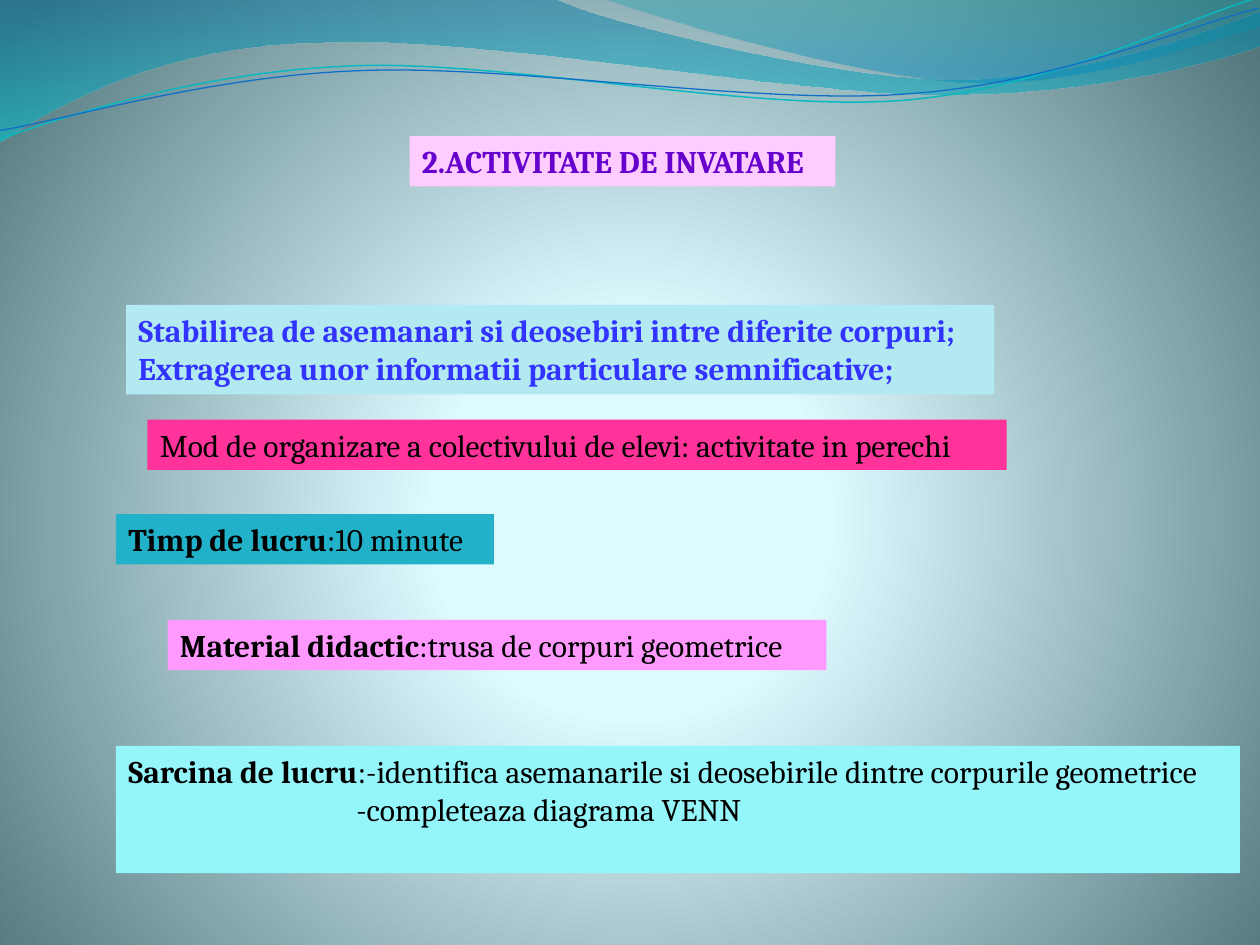
"""Build the lesson activity slide with its wave header and coloured text boxes."""
from dataclasses import dataclass
from typing import NamedTuple

from lxml.etree import Element, SubElement
from pptx import Presentation
from pptx.dml.color import RGBColor
from pptx.enum.text import MSO_ANCHOR, MSO_AUTO_SIZE
from pptx.oxml.ns import qn
from pptx.util import Emu, Pt

EMU_PER_PX = 9144
LINE_TILT = 357.3


class Stop(NamedTuple):
    pos: int
    color: str
    alpha: int = 100


@dataclass(frozen=True)
class Theme:
    font: str = "Cambria"
    size: int = 18
    black: str = "000000"
    violet: str = "6600CC"
    blue: str = "3333FF"
    lilac: str = "FFCCFF"
    pale_blue: str = "B3EAF2"
    rose: str = "FF3399"
    teal: str = "21B2C9"
    pink: str = "FF99FF"
    aqua: str = "94F5FA"
    turquoise_line: str = "0AB8BF"
    blue_line: str = "0F6FC6"
    backdrop: tuple = (Stop(0, "DEFBFF"), Stop(25, "DDFAFF"), Stop(100, "52767C"))
    left_wave: tuple = (Stop(0, "0074A1", 45), Stop(100, "00C6CF", 55))
    right_wave: tuple = (Stop(0, "00A1A9", 30), Stop(80, "008BBF", 45))


THEME = Theme()


class Line(NamedTuple):
    text: str
    lead: str = ""
    bold: bool = False
    indent: int = 0


class Box(NamedTuple):
    x: int
    y: int
    w: int
    h: int
    fill: str
    color: str
    lines: tuple


class Wave(NamedTuple):
    start: tuple
    segments: tuple
    stops: tuple = ()
    line: str = ""
    width: float = 0


WAVES = (
    Wave((0, -1), ((440, -1), (476, 17, 664, 63, 758, 63), (853, 63, 958, 26, 1000, 9),
                   (1001, 36), (983, 44, 870, 76, 746, 75), (622, 75, 382, 28, 257, 34),
                   (129, 35, 46, 83, -1, 113), (0, -1)), stops=THEME.left_wave),
    Wave((479, -1), ((509, 11, 682, 62, 769, 65), (856, 69, 961, 32, 1000, 21),
                     (1000, 0), (479, -1)), stops=THEME.right_wave),
    Wave((-2, 87), ((47, 72, 158, 41, 278, 42), (396, 42, 591, 93, 712, 90),
                    (832, 87, 940, 36, 1000, 22)), line=THEME.turquoise_line, width=0.85),
    Wave((-2, 80), ((46, 75, 164, 45, 283, 46), (404, 46, 596, 88, 716, 85),
                    (835, 83, 942, 42, 1001, 30)), line=THEME.blue_line, width=0.75),
)

BOXES = (
    Box(325, 108, 338, 40, THEME.lilac, THEME.violet,
        (Line("2.ACTIVITATE DE INVATARE", bold=True),)),
    Box(100, 242, 689, 71, THEME.pale_blue, THEME.blue,
        (Line("Stabilirea de asemanari si deosebiri intre diferite corpuri;", bold=True),
         Line("Extragerea unor informatii particulare semnificative;", bold=True))),
    Box(117, 333, 682, 40, THEME.rose, THEME.black,
        (Line("Mod de organizare a colectivului de elevi: activitate in perechi"),)),
    Box(92, 408, 300, 40, THEME.teal, THEME.black,
        (Line(":10 minute", lead="Timp de lucru"),)),
    Box(133, 492, 523, 40, THEME.pink, THEME.black,
        (Line(":trusa de corpuri geometrice", lead="Material didactic"),)),
    Box(92, 592, 892, 101, THEME.aqua, THEME.black,
        (Line(":-identifica asemanarile si deosebirile dintre corpurile geometrice",
              lead="Sarcina de lucru"),
         Line("-completeaza diagrama VENN", indent=181))),
)


def px(value: float) -> Emu:
    """Turn px into EMU."""
    return Emu(round(value * EMU_PER_PX))


def set_gradient(element, stops: tuple, radial: bool = False) -> None:
    """Write the stops and direction of the gradient fill inside an element."""
    grad = element.find(".//" + qn("a:gradFill"))
    for child in list(grad):
        grad.remove(child)
    gs_list = SubElement(grad, qn("a:gsLst"))
    for stop in stops:
        gs = SubElement(gs_list, qn("a:gs"), pos=str(stop.pos * 1000))
        clr = SubElement(gs, qn("a:srgbClr"), val=stop.color)
        if stop.alpha < 100:
            SubElement(clr, qn("a:alpha"), val=str(stop.alpha * 1000))
    if radial:
        direction = SubElement(grad, qn("a:path"), {"path": "circle"})
        SubElement(direction, qn("a:fillToRect"),
                   l="10000", t="110000", r="10000", b="100000")
    else:
        SubElement(grad, qn("a:lin"), ang="5400000", scaled="0")


def bend(element, segments: tuple) -> None:
    """Join the three line steps of each curved segment into one cubic curve."""
    steps = iter(element.findall(".//" + qn("a:lnTo")))
    for segment in segments:
        group = [next(steps) for _ in range(len(segment) // 2)]
        if len(group) == 3:
            curve = Element(qn("a:cubicBezTo"))
            group[0].addprevious(curve)
            for step in group:
                curve.append(step[0])
                step.getparent().remove(step)


def draw_wave(s, wave: Wave) -> None:
    """Draw a filled wave or a tilted wave line."""
    builder = s.shapes.build_freeform(*map(px, wave.start))
    points = [(px(x), px(y)) for seg in wave.segments for x, y in zip(seg[::2], seg[1::2])]
    builder.add_line_segments(points, close=bool(wave.stops))
    sp = builder.convert_to_shape()
    bend(sp.element, wave.segments)
    sp.shadow.inherit = False
    if wave.stops:
        sp.fill.gradient()
        set_gradient(sp.element, wave.stops)
        sp.line.fill.background()
    else:
        sp.rotation = LINE_TILT
        sp.fill.background()
        sp.line.color.rgb = RGBColor.from_string(wave.line)
        sp.line.width = Pt(wave.width)


def draw_box(s, box: Box) -> None:
    """Draw a coloured text box with its lines."""
    sp = s.shapes.add_textbox(*map(px, box[:4]))
    sp.fill.solid()
    sp.fill.fore_color.rgb = RGBColor.from_string(box.fill)
    tf = sp.text_frame
    tf.word_wrap = True
    tf.auto_size = MSO_AUTO_SIZE.NONE
    tf.vertical_anchor = MSO_ANCHOR.TOP
    for i, line in enumerate(box.lines):
        p = tf.add_paragraph() if i else tf.paragraphs[0]
        p.font.name, p.font.size, p.font.bold = THEME.font, Pt(THEME.size), line.bold
        p.font.color.rgb = RGBColor.from_string(box.color)
        if line.indent:
            p._p.get_or_add_pPr().set("marL", str(px(line.indent)))
        if line.lead:
            r = p.add_run()
            r.text, r.font.bold = line.lead, True
        p.add_run().text = line.text


def main() -> None:
    """Build and save the slide."""
    prs = Presentation()
    prs.slide_width, prs.slide_height = px(1000), px(750)
    s = prs.slides.add_slide(prs.slide_layouts[6])
    s.background.fill.gradient()
    set_gradient(s.element, THEME.backdrop, radial=True)
    for wave in WAVES:
        draw_wave(s, wave)
    for box in BOXES:
        draw_box(s, box)
    prs.save("out.pptx")


if __name__ == "__main__":
    main()
